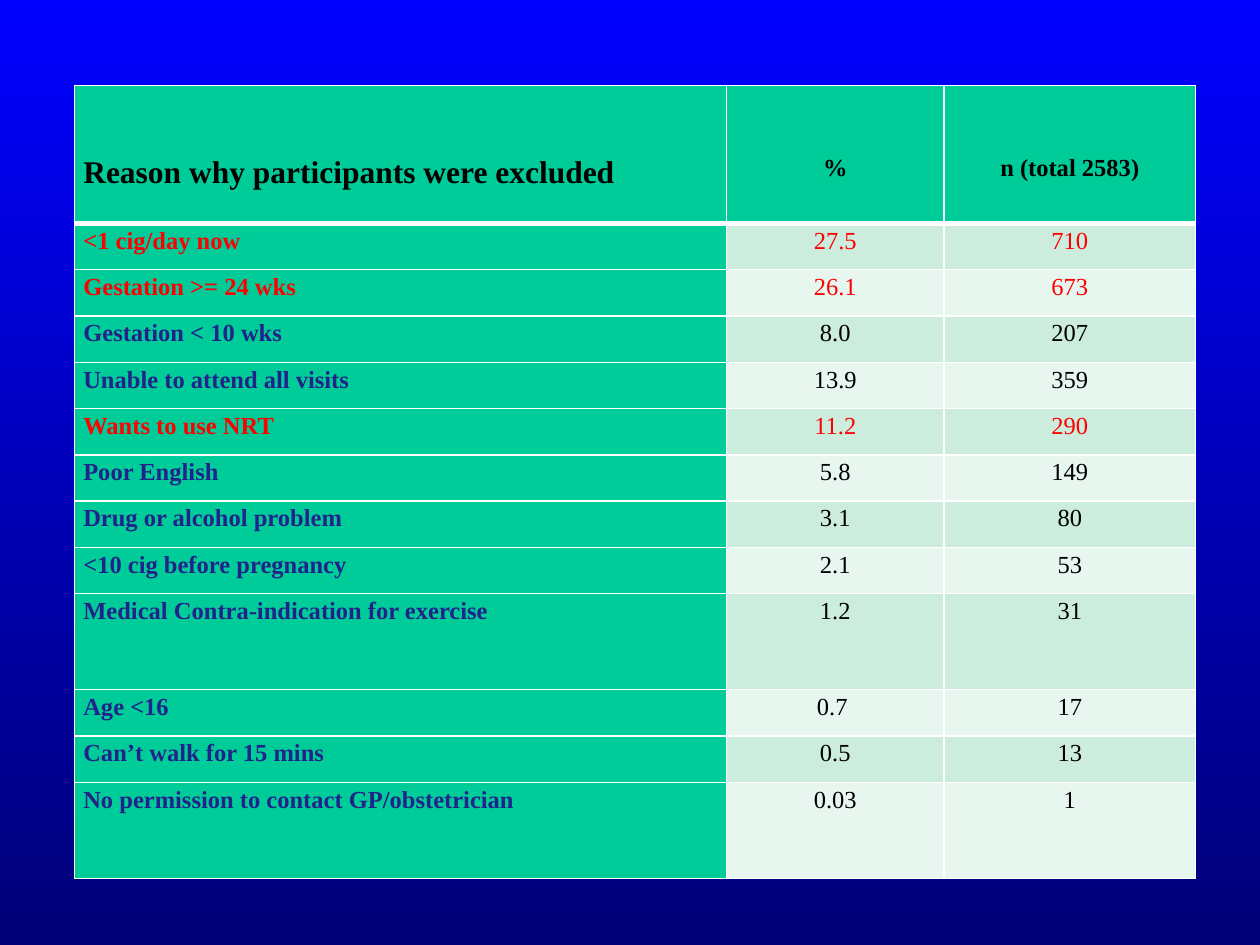
from dataclasses import dataclass

from lxml.etree import SubElement
from pptx import Presentation
from pptx.dml.color import RGBColor as Rgb
from pptx.enum.text import PP_ALIGN as Align
from pptx.oxml.ns import qn
from pptx.slide import Slide
from pptx.table import _Cell as Cell
from pptx.util import Pt


@dataclass(frozen=True)
class Theme:
    font: str = "Times New Roman"
    sky: str = "0000FF"
    deep: str = "000076"
    green: str = "00CC99"
    bands: tuple[str, str] = ("CCECDE", "E7F6EF")
    border: str = "FFFFFF"
    ink: str = "000000"
    label: str = "22228B"
    highlight: str = "FF0000"
    heading_size: float = 18
    body_size: float = 14
    line_spacing: float = 1.15
    thin: float = 1
    thick: float = 3


@dataclass(frozen=True)
class Reason:
    label: str
    percent: str
    count: str
    highlighted: bool = False
    tall: bool = False


@dataclass(frozen=True)
class CellStyle:
    fill: str
    color: str
    size: float
    bold: bool
    align: Align
    margin_top: float = 0
    space_before: float = 0
    line_above: float = 1
    line_below: float = 1


THEME = Theme()
HEADINGS = ("Reason why participants were excluded", "%", "n (total 2583)")
REASONS = (
    Reason("<1 cig/day now", "27.5", "710", highlighted=True),
    Reason("Gestation >= 24 wks", "26.1", "673", highlighted=True),
    Reason("Gestation < 10 wks", "8.0", "207"),
    Reason("Unable to attend all visits", "13.9", "359"),
    Reason("Wants to use NRT", "11.2", "290", highlighted=True),
    Reason("Poor English", "5.8", "149"),
    Reason("Drug or alcohol problem", "3.1", "80"),
    Reason("<10 cig before pregnancy", "2.1", "53"),
    Reason("Medical Contra-indication for exercise", "1.2", "31", tall=True),
    Reason("Age <16", "0.7 ", "17"),
    Reason("Can’t walk for 15 mins", "0.5", "13"),
    Reason("No permission to contact GP/obstetrician", "0.03", "1", tall=True),
)
LEFT, TOP = 42.6, 48.9
COLUMN_WIDTHS = (372.6, 124.3, 143.7)
HEADER_HEIGHT, ROW_HEIGHT, TALL_HEIGHT = 78.8, 26.46, 54.9
HEADER_DROP = 37


def draw_borders(cell: Cell, style: CellStyle) -> None:
    """Add the four cell edges; call before the fill, which must follow them."""
    properties = cell._tc.get_or_add_tcPr()
    widths = {"L": THEME.thin, "R": THEME.thin, "T": style.line_above, "B": style.line_below}
    for side, width in widths.items():
        line = SubElement(properties, qn(f"a:ln{side}"), w=str(Pt(width)))
        solid = SubElement(line, qn("a:solidFill"))
        SubElement(solid, qn("a:srgbClr"), val=THEME.border)


def write_cell(cell: Cell, text: str, style: CellStyle) -> None:
    draw_borders(cell, style)
    cell.fill.solid()
    cell.fill.fore_color.rgb = Rgb.from_string(style.fill)
    cell.margin_left = cell.margin_right = Pt(5)
    cell.margin_top, cell.margin_bottom = Pt(style.margin_top), Pt(0)
    cell.text_frame.text = text
    para = cell.text_frame.paragraphs[0]
    para.alignment = style.align
    para.line_spacing = THEME.line_spacing
    para.space_before = Pt(style.space_before)
    font = para.runs[0].font
    font.name, font.size, font.bold = THEME.font, Pt(style.size), style.bold
    font.color.rgb = Rgb.from_string(style.color)


def heading_style(column: int) -> CellStyle:
    first = column == 0
    return CellStyle(
        fill=THEME.green, color=THEME.ink, bold=True,
        size=THEME.heading_size if first else THEME.body_size,
        align=Align.LEFT if first else Align.CENTER,
        margin_top=HEADER_DROP, line_below=THEME.thick)


def reason_style(reason: Reason, row: int, column: int) -> CellStyle:
    first = column == 0
    plain_color = THEME.label if first else THEME.ink
    return CellStyle(
        fill=THEME.green if first else THEME.bands[(row - 1) % 2],
        color=THEME.highlight if reason.highlighted else plain_color,
        size=THEME.body_size, bold=first,
        align=Align.LEFT if first else Align.CENTER, space_before=6,
        line_above=THEME.thick if row == 1 else THEME.thin)


def paint_background(slide: Slide) -> None:
    fill = slide.background.fill
    fill.gradient()
    fill.gradient_angle = 270
    for stop, color in zip(fill.gradient_stops, (THEME.sky, THEME.deep)):
        stop.color.rgb = Rgb.from_string(color)


def add_reason_table(slide: Slide) -> None:
    heights = [HEADER_HEIGHT]
    heights += [TALL_HEIGHT if reason.tall else ROW_HEIGHT for reason in REASONS]
    frame = slide.shapes.add_table(
        len(heights), len(COLUMN_WIDTHS), Pt(LEFT), Pt(TOP),
        Pt(sum(COLUMN_WIDTHS)), Pt(sum(heights)))
    table = frame.table
    for column, width in zip(table.columns, COLUMN_WIDTHS):
        column.width = Pt(width)
    for row, height in zip(table.rows, heights):
        row.height = Pt(height)
    for column, heading in enumerate(HEADINGS):
        write_cell(table.cell(0, column), heading, heading_style(column))
    for row, reason in enumerate(REASONS, start=1):
        for column, text in enumerate((reason.label, reason.percent, reason.count)):
            write_cell(table.cell(row, column), text, reason_style(reason, row, column))


def main() -> None:
    deck = Presentation()
    deck.slide_width, deck.slide_height = Pt(720), Pt(540)
    slide = deck.slides.add_slide(deck.slide_layouts[6])
    paint_background(slide)
    add_reason_table(slide)
    deck.save("out.pptx")


if __name__ == "__main__":
    main()
